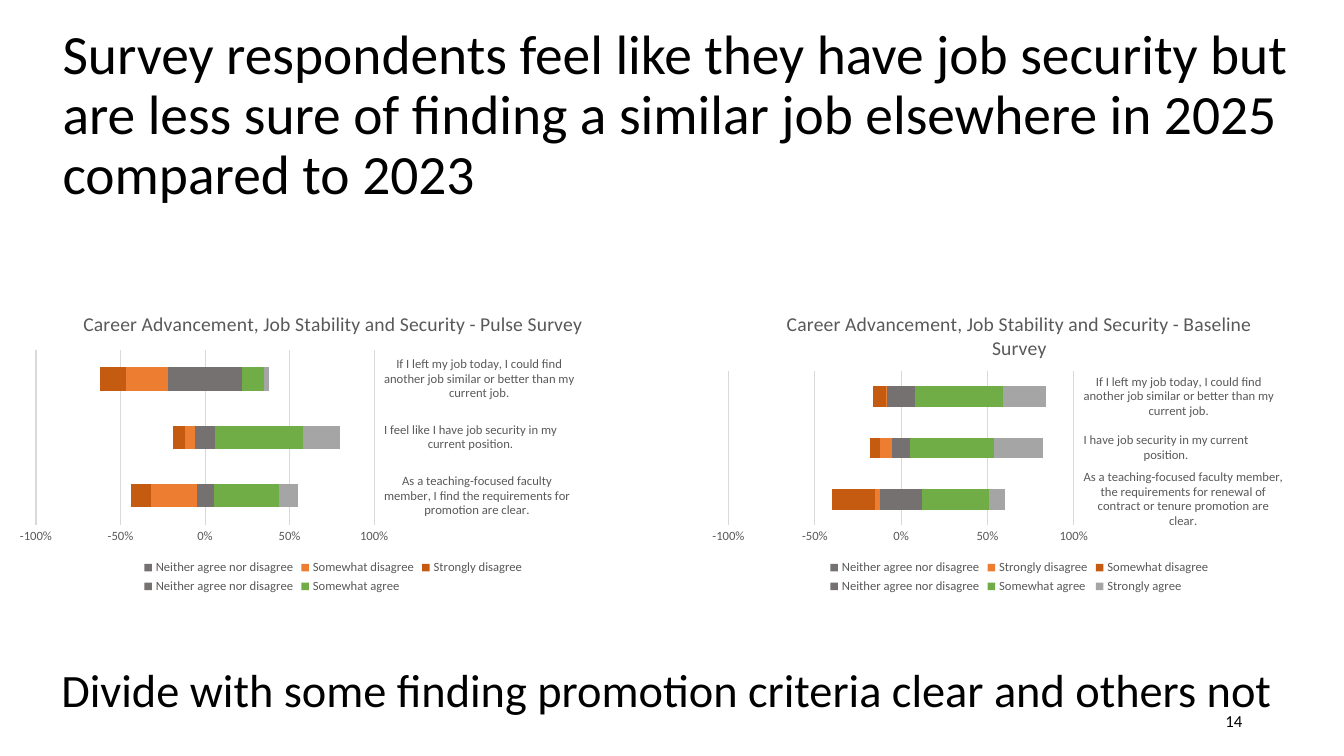
from pptx import Presentation
from pptx.chart.data import CategoryChartData
from pptx.dml.color import RGBColor
from pptx.enum.chart import XL_CHART_TYPE, XL_LEGEND_POSITION, XL_TICK_LABEL_POSITION, XL_TICK_MARK
from pptx.enum.text import MSO_ANCHOR, MSO_AUTO_SIZE, PP_ALIGN
from pptx.oxml import parse_xml
from pptx.oxml.ns import nsdecls
from pptx.util import Inches, Pt

TITLE = ("Survey respondents feel like they have job security but are less sure "
         "of finding a similar job elsewhere in 2025 compared to 2023")
TAKEAWAY = "Divide with some finding promotion criteria clear and others not"
PAGE = "14"
NEITHER = "Neither agree nor disagree"
LEAVE = "If I left my job today, I could find another job similar or better than my current job."

BASELINE = {
    "title": "Career Advancement, Job Stability and Security - Baseline Survey",
    "box": (6.94, 2.93, 6.34, 3),
    "plot": {"x": 0.045, "y": 0.25, "w": 0.54, "h": 0.51},
    "hidden": [],
    "cats": ["As a teaching-focused faculty member, the requirements for renewal of "
             "contract or tenure promotion are clear.",
             "I have job security in my current position.", LEAVE],
    "series": [(NEITHER, (-0.12, -0.05, -0.08)),
               ("Strongly disagree", (-0.03, -0.07, -0.01)),
               ("Somewhat disagree", (-0.25, -0.06, -0.07)),
               (NEITHER, (0.12, 0.05, 0.08)),
               ("Somewhat agree", (0.39, 0.49, 0.51)),
               ("Strongly agree", (0.09, 0.28, 0.25))],
}
PULSE = {
    "title": "Career Advancement, Job Stability and Security - Pulse Survey",
    "box": (0.08, 2.93, 6.45, 3),
    "plot": {"x": 0.043, "y": 0.18, "w": 0.52, "h": 0.58},
    "hidden": [0],
    "cats": ["As a teaching-focused faculty member, I find the requirements for promotion are clear.",
             "I feel like I have job security in my current position.", LEAVE],
    "series": [(NEITHER, (-0.05, -0.06, -0.22)),
               ("Somewhat disagree", (-0.27, -0.06, -0.25)),
               ("Strongly disagree", (-0.12, -0.07, -0.15)),
               (NEITHER, (0.05, 0.06, 0.22)),
               ("Somewhat agree", (0.39, 0.52, 0.13)),
               ("Strongly agree", (0.11, 0.22, 0.03))],
}

THEME = {
    "font": "Calibri", "ink": "000000", "muted": "595959", "grid": "D9D9D9",
    "bars": ["767171", "ED7D31", "C55A11", "767171", "70AD47", "A5A5A5"],
    "title": 39.6, "takeaway": 33.1, "page": 12, "chart_title": 14, "chart": 10, "label": 9,
}


def apply(obj, **values):
    for name, value in values.items():
        setattr(obj, name, value)


def style_font(font, size, color):
    apply(font, name=THEME["font"], size=Pt(THEME[size]), bold=False)
    font.color.rgb = RGBColor.from_string(THEME[color])


def style_line(line):
    line.color.rgb = RGBColor.from_string(THEME["grid"])
    line.width = Pt(0.75)


def write(sp, box, text, size, align=PP_ALIGN.LEFT, spacing=0.9):
    apply(sp, **dict(zip(("left", "top", "width", "height"), map(Inches, box))))
    tf = sp.text_frame
    apply(tf, word_wrap=True, auto_size=MSO_AUTO_SIZE.NONE, vertical_anchor=MSO_ANCHOR.MIDDLE)
    p = tf.paragraphs[0]
    apply(p, alignment=align, line_spacing=spacing)
    r = p.add_run()
    r.text = text
    style_font(r.font, size, "ink")


def place_plot(chart, plot):
    area = chart._chartSpace.chart.plotArea
    for old in area.xpath("c:layout"):
        area.remove(old)
    modes = '<c:xMode val="edge"/><c:yMode val="edge"/>'
    spots = "".join(f'<c:{key} val="{value}"/>' for key, value in plot.items())
    area.insert(0, parse_xml(f'<c:layout {nsdecls("c")}><c:manualLayout>'
                             f'<c:layoutTarget val="inner"/>{modes}{spots}'
                             '</c:manualLayout></c:layout>'))


def add_survey(s, survey):
    data = CategoryChartData(number_format="0%")
    data.categories = survey["cats"]
    for name, values in survey["series"]:
        data.add_series(name, values)
    chart = s.shapes.add_chart(XL_CHART_TYPE.BAR_STACKED, *map(Inches, survey["box"]), data).chart
    style_font(chart.font, "chart", "ink")

    chart.has_title = True
    r = chart.chart_title.text_frame.paragraphs[0].add_run()
    r.text = survey["title"]
    style_font(r.font, "chart_title", "muted")
    chart.chart_title.include_in_layout = False

    chart.has_legend = True
    apply(chart.legend, position=XL_LEGEND_POSITION.BOTTOM, include_in_layout=False)
    style_font(chart.legend.font, "label", "muted")
    for idx in survey["hidden"]:
        chart.legend._element.insert(1, parse_xml(
            f'<c:legendEntry {nsdecls("c")}><c:idx val="{idx}"/><c:delete val="1"/></c:legendEntry>'))

    cat, val = chart.category_axis, chart.value_axis
    for axis in (cat, val):
        apply(axis, major_tick_mark=XL_TICK_MARK.NONE, minor_tick_mark=XL_TICK_MARK.NONE)
        style_font(axis.tick_labels.font, "label", "muted")
    cat.tick_label_position = XL_TICK_LABEL_POSITION.HIGH
    style_line(cat.format.line)
    apply(val, minimum_scale=-1, maximum_scale=1, major_unit=0.5, has_major_gridlines=True)
    apply(val.tick_labels, number_format="0%", number_format_is_linked=False)
    val.format.line.fill.background()
    style_line(val.major_gridlines.format.line)

    apply(chart.plots[0], gap_width=150, overlap=100, vary_by_categories=False)
    for series, color in zip(chart.plots[0].series, THEME["bars"]):
        series.invert_if_negative = False
        series.format.fill.solid()
        series.format.fill.fore_color.rgb = RGBColor.from_string(color)
    place_plot(chart, survey["plot"])


def main():
    """Build the job security slide with its two survey charts."""
    prs = Presentation()
    apply(prs, slide_width=Inches(13.33), slide_height=Inches(7.5))
    s = prs.slides.add_slide(prs.slide_layouts[5])
    write(s.shapes.title, (0.52, 0.43, 12.75, 1.45), TITLE, "title")
    page = s.shapes.add_textbox(0, 0, 0, 0)
    write(page, (9.42, 6.95, 3, 0.4), PAGE, "page", PP_ALIGN.RIGHT, 1.0)
    for survey in (BASELINE, PULSE):
        add_survey(s, survey)
    takeaway = s.shapes.add_textbox(0, 0, 0, 0)
    write(takeaway, (0.51, 6.37, 12.77, 0.99), TAKEAWAY, "takeaway")
    prs.save("out.pptx")


if __name__ == "__main__":
    main()
